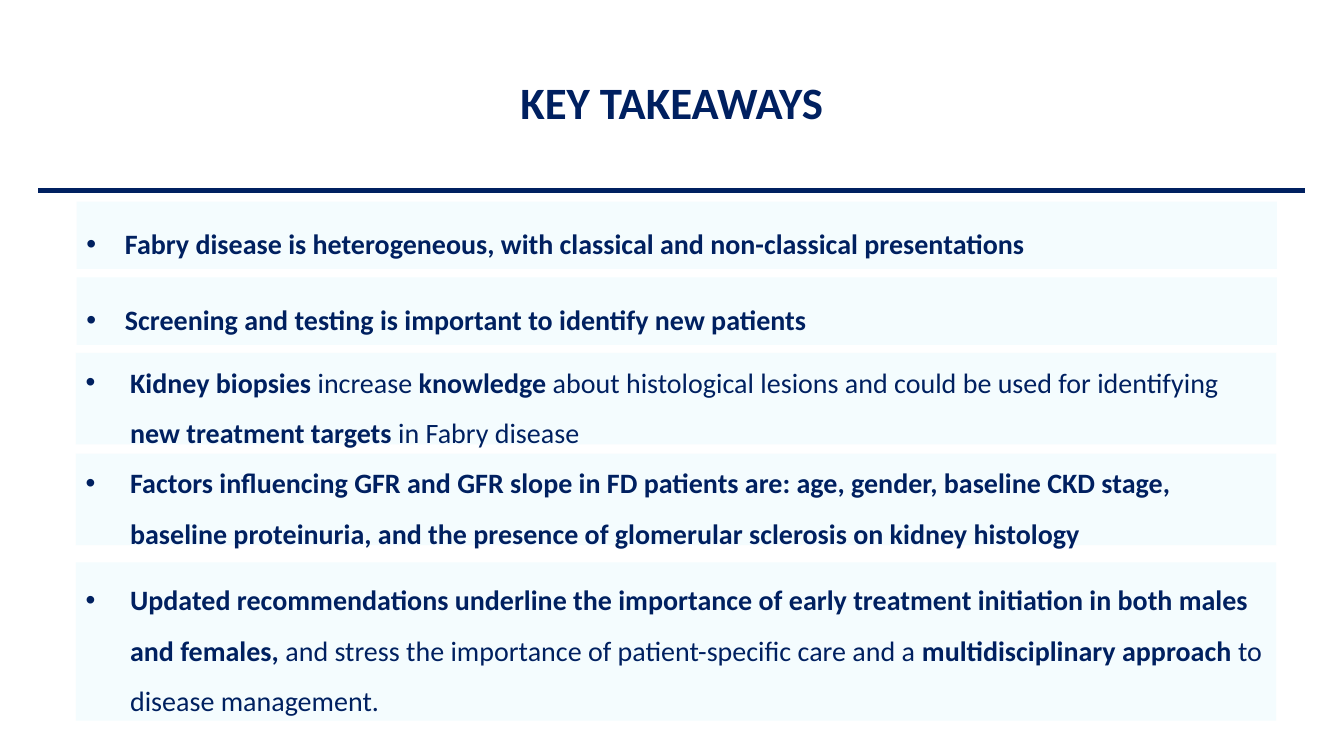
from lxml.etree import SubElement
from pptx import Presentation
from pptx.dml.color import RGBColor
from pptx.enum.shapes import MSO_CONNECTOR, MSO_SHAPE
from pptx.enum.text import MSO_ANCHOR, PP_ALIGN
from pptx.oxml.ns import qn
from pptx.util import Cm, Pt

COLORS = {"navy": "002060", "panel": "F4FCFE"}
NAVY = RGBColor.from_string(COLORS["navy"])
PANEL = RGBColor.from_string(COLORS["panel"])


def style_font(font, size, bold):
    font.name = "Calibri"
    font.size = Pt(size)
    font.bold = bold
    font.color.rgb = NAVY


def add_bullet(p, indent):
    pPr = p._p.get_or_add_pPr()
    pPr.set("marL", str(indent))
    pPr.set("indent", str(-indent))
    SubElement(pPr, qn("a:buFont")).set("typeface", "Arial")
    SubElement(pPr, qn("a:buChar")).set("char", "•")


prs = Presentation()
prs.slide_width = Cm(33.87)
prs.slide_height = Cm(19.05)
s = prs.slides.add_slide(prs.slide_layouts[5])

title = s.shapes.title
title.left, title.top, title.width, title.height = Cm(5.08), Cm(1.75), Cm(23.7), Cm(1.63)
tf = title.text_frame
tf.text = "KEY TAKEAWAYS"
tf.vertical_anchor = MSO_ANCHOR.MIDDLE
p = tf.paragraphs[0]
p.alignment = PP_ALIGN.CENTER
style_font(p.runs[0].font, 32, True)

rule = s.shapes.add_connector(MSO_CONNECTOR.STRAIGHT, Cm(0.97), Cm(4.8), Cm(32.89), Cm(4.8))
rule.line.color.rgb = NAVY
rule.line.width = Pt(3.5)
SubElement(rule._element.spPr, qn("a:effectLst"))

SHORT = {"left": Cm(1.93), "indent": Cm(0.97), "inset": Cm(0.13)}
LONG = {"left": Cm(1.91), "indent": Cm(1.12), "inset": Cm(0.25)}
takeaways = [
    (SHORT, 5.08, 1.7, [
        ("Fabry disease is heterogeneous, with classical and non-classical presentations", True)]),
    (SHORT, 6.99, 1.7, [
        ("Screening and testing is important to identify new patients", True)]),
    (LONG, 8.89, 2.31, [
        ("Kidney biopsies ", True),
        ("increase ", False),
        ("knowledge ", True),
        ("about histological lesions and could be used for identifying ", False),
        ("new treatment targets ", True),
        ("in Fabry disease", False)]),
    (LONG, 11.43, 2.31, [
        ("Factors influencing GFR and GFR slope in FD patients are: age, gender, baseline CKD stage, "
         "baseline proteinuria, and the presence of glomerular sclerosis on kidney histology", True)]),
    (LONG, 14.17, 3.99, [
        ("Updated recommendations underline the importance of early treatment initiation "
         "in both males and females, ", True),
        ("and stress the importance of patient-specific care and a ", False),
        ("multidisciplinary approach ", True),
        ("to disease management.", False)]),
]

for layout, top, height, parts in takeaways:
    sp = s.shapes.add_shape(MSO_SHAPE.RECTANGLE, layout["left"], Cm(top), Cm(30.25), Cm(height))
    sp.shadow.inherit = False
    sp.fill.solid()
    sp.fill.fore_color.rgb = PANEL
    sp.line.fill.background()
    tf = sp.text_frame
    tf.word_wrap = True
    tf.vertical_anchor = MSO_ANCHOR.MIDDLE
    tf.margin_left = tf.margin_right = Cm(0.25)
    tf.margin_top = tf.margin_bottom = layout["inset"]
    p = tf.paragraphs[0]
    add_bullet(p, layout["indent"])
    p.alignment = PP_ALIGN.LEFT
    p.line_spacing = 1.5
    for text, bold in parts:
        r = p.add_run()
        r.text = text
        style_font(r.font, 20, bold)

prs.save("out.pptx")
